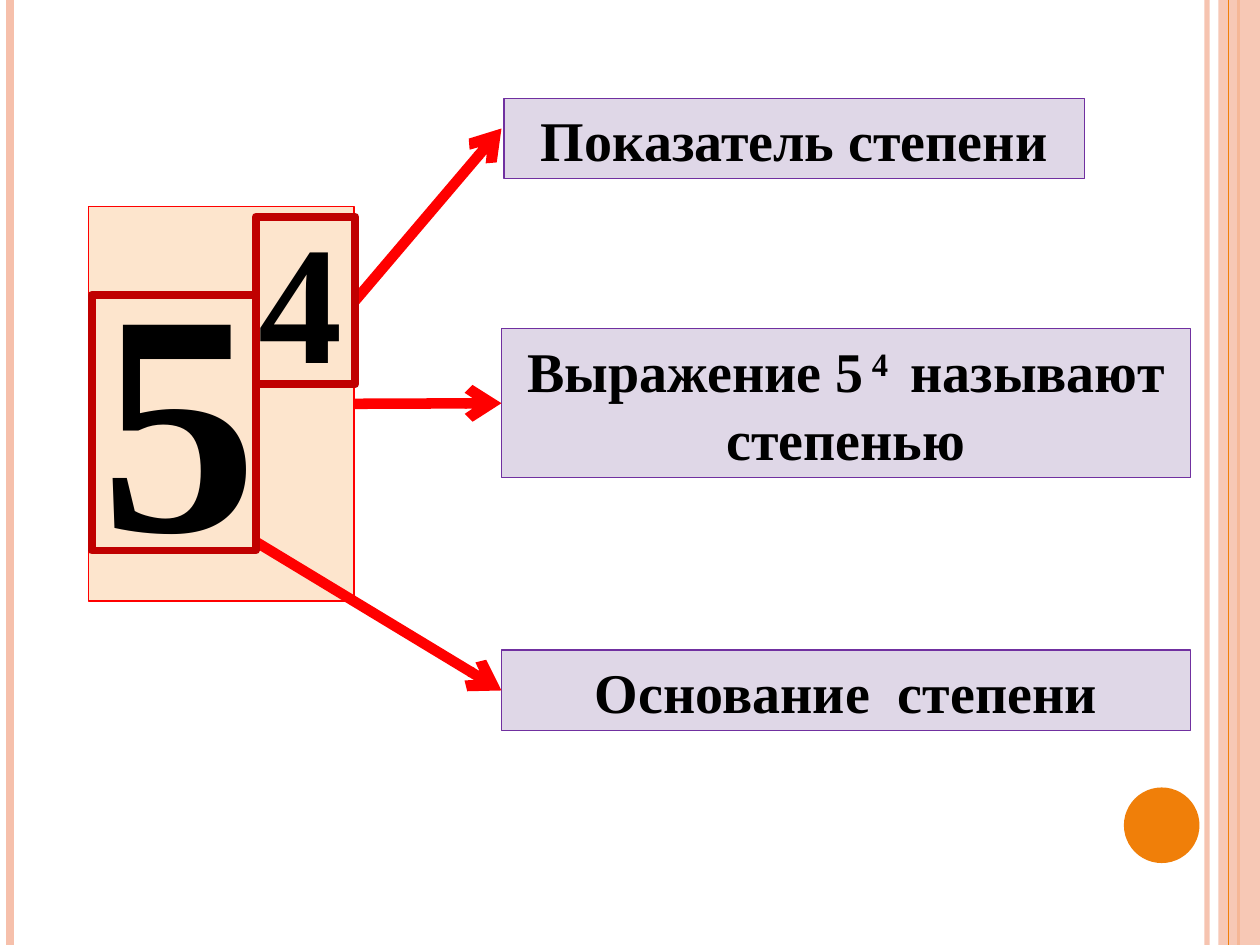
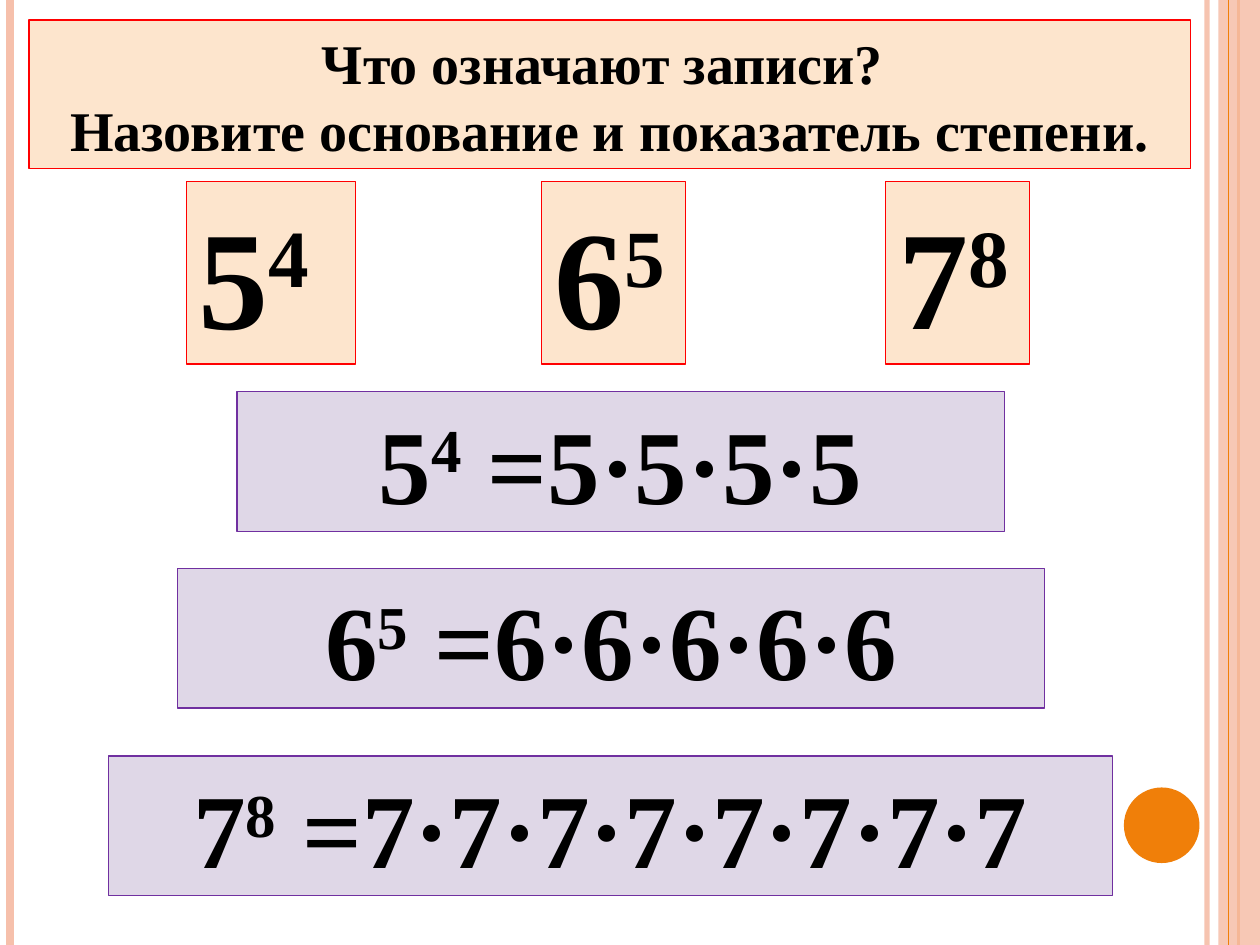
from dataclasses import dataclass

from lxml import etree
from pptx import Presentation
from pptx.dml.color import RGBColor
from pptx.enum import shapes, text
from pptx.oxml.ns import qn
from pptx.util import Inches, Pt


@dataclass(frozen=True)
class Theme:
    """Colours, font and type sizes shared by the slides."""
    font: str = "Times New Roman"
    ink: str = "000000"
    peach: str = "FDE5CD"
    lilac: str = "DFD7E7"
    purple: str = "7030A0"
    red: str = "FF0000"
    dark_red: str = "C00000"
    salmon: str = "F6C0AB"
    orange: str = "F07F09"
    label: int = 32
    equation: int = 60
    power: int = 80
    exponent: int = 96
    base: int = 180
    thin: float = 0.75
    frame: float = 4.5
    arrow: float = 6


THEME = Theme()
PEACH_CARD = (THEME.peach, THEME.red)
LILAC_CARD = (THEME.lilac, THEME.purple)
LEFT, CENTER = text.PP_ALIGN.LEFT, text.PP_ALIGN.CENTER


def paint(shape, fill, line, width=THEME.thin):
    """Set the fill and outline of a shape; None means no paint."""
    if fill:
        shape.fill.solid()
        shape.fill.fore_color.rgb = RGBColor.from_string(fill)
    else:
        shape.fill.background()
    if line:
        shape.line.color.rgb = RGBColor.from_string(line)
        shape.line.width = Pt(width)
    else:
        shape.line.fill.background()


def set_opacity(shape, percent):
    """Make the explicit colours of a shape partly transparent."""
    for colour in shape.element.iter(qn("a:srgbClr")):
        etree.SubElement(colour, qn("a:alpha")).set("val", str(percent * 1000))


def write(shape, paragraphs, size, align=CENTER):
    """Write paragraphs of (text, is_superscript) runs into a shape."""
    frame = shape.text_frame
    frame.word_wrap = True
    frame.vertical_anchor = text.MSO_ANCHOR.BOTTOM
    frame.margin_left = Inches(0.1)
    frame.margin_right = Inches(0 if align == LEFT else 0.1)
    frame.margin_top = frame.margin_bottom = Inches(0.05)
    for index, runs in enumerate(paragraphs):
        paragraph = frame.add_paragraph() if index else frame.paragraphs[0]
        paragraph.alignment = align
        for words, is_superscript in runs:
            run = paragraph.add_run()
            run.text = words
            run.font.name = THEME.font
            run.font.size = Pt(size)
            run.font.bold = True
            run.font.color.rgb = RGBColor.from_string(THEME.ink)
            if is_superscript:
                run.font._element.set("baseline", "30000")


def add_box(slide, box, fill=None, line=None, width=THEME.thin,
            kind=shapes.MSO_SHAPE.RECTANGLE):
    """Add a flat preset shape at box (left, top, width, height)."""
    shape = slide.shapes.add_shape(kind, *map(Inches, box))
    shape.shadow.inherit = False
    paint(shape, fill, line, width)
    return shape


def add_card(slide, box, colours, runs, size, align=CENTER):
    """Add a coloured card with one paragraph."""
    card = add_box(slide, box, *colours)
    write(card, [runs], size, align)
    return card


def add_line(slide, start, end, colour, width, has_arrow=False):
    """Add a straight connector, with an arrowhead at its end if wanted."""
    line = slide.shapes.add_connector(
        shapes.MSO_CONNECTOR.STRAIGHT, *map(Inches, (*start, *end)))
    line.line.color.rgb = RGBColor.from_string(colour)
    line.line.width = Pt(width)
    if has_arrow:
        outline = line.line._get_or_add_ln()
        etree.SubElement(outline, qn("a:tailEnd")).set("type", "arrow")
    etree.SubElement(line.element.spPr, qn("a:effectLst"))
    return line


def add_side_bands(slide, height=7.5):
    """Draw the vertical stripes and the orange disc."""
    def stripe(x, colour, width):
        return add_line(slide, (x, 0), (x, height), colour, width)

    set_opacity(stripe(9.58, THEME.salmon, 3), 93)
    stripe(0.08, THEME.salmon, 4.5)
    stripe(9.75 + 0.08, THEME.orange, 1.5)
    set_opacity(add_box(slide, (9.67, 0, 0.33, height), THEME.salmon), 87)
    stripe(9.75, THEME.orange, 0.75)
    add_box(slide, (8.92, 6.25, 0.6, 0.6), THEME.orange,
            kind=shapes.MSO_SHAPE.OVAL)


def add_big_power(slide, left, top):
    """Draw the large power and return its card."""
    card = add_card(slide, (left, top, 2.11, 3.13), PEACH_CARD,
                    [("5", False)], THEME.base, LEFT)
    add_card(slide, (left + 1.25, top - 0.16, 0.7, 1.72), (None, None),
             [("4", False)], THEME.exponent, LEFT)
    return card


def build_parts_slide(presentation):
    """Name the parts of a power with arrows from each part."""
    slide = presentation.slides.add_slide(presentation.slide_layouts[6])
    add_side_bands(slide)
    add_card(slide, (4, 0.78, 4.61, 0.64), LILAC_CARD,
             [("Показатель степени", False)], THEME.label)
    base_label = add_card(slide, (3.98, 5.16, 5.47, 0.64), LILAC_CARD,
                          [("Основание  степени", False)], THEME.label)
    power_card = add_big_power(slide, 0.7, 1.64)
    power_label = add_card(
        slide, (3.98, 2.61, 5.47, 1.18), LILAC_CARD,
        [("Выражение 5", False), (" 4 ", True), (" называют степенью", False)],
        THEME.label)

    base_arrow, exponent_arrow, power_arrow = [
        add_line(slide, start, end, THEME.red, THEME.arrow, True)
        for start, end in (((2.03, 4.3), (3.98, 5.48)),
                           ((2.82, 2.38), (3.98, 1.02)),
                           ((2.81, 3.2), (3.98, 3.2)))]
    exponent_frame, _ = [
        add_box(slide, box, None, THEME.dark_red, THEME.frame)
        for box in ((2.03, 1.72, 0.79, 1.33), (0.73, 2.34, 1.3, 2.03))]
    base_arrow.end_connect(base_label, 1)
    exponent_arrow.begin_connect(exponent_frame, 3)
    power_arrow.begin_connect(power_card, 3)
    power_arrow.end_connect(power_label, 1)


def add_heading(slide, box, lines):
    """Place and format the title placeholder as a card."""
    title = slide.shapes.title
    title.left, title.top, title.width, title.height = map(Inches, box)
    paint(title, *PEACH_CARD)
    write(title, [[(line, False)] for line in lines], THEME.label)


def build_examples_slide(presentation):
    """Show three powers and their expansion into products."""
    slide = presentation.slides.add_slide(presentation.slide_layouts[5])
    add_side_bands(slide)
    add_heading(slide, (0.23, 0.16, 9.22, 1.18),
                ("Что означают записи? ",
                 "Назовите основание и показатель степени."))
    examples = (
        (5, 4, (1.48, 1.34), (1.88, 3.11, 6.09)),
        (6, 5, (4.3, 1.14), (1.41, 4.51, 6.88)),
        (7, 8, (7.03, 1.14), (0.86, 6, 7.97)),
    )
    for base, exponent, (left, width), product_box in examples:
        power = [(str(base), False), (str(exponent), True)]
        product = " =" + "·".join([str(base)] * exponent)
        add_card(slide, (left, 1.44, width, 1.45), PEACH_CARD, power,
                 THEME.power, LEFT)
        add_card(slide, (*product_box, 1.11), LILAC_CARD,
                 power + [(product, False)], THEME.equation)


def main():
    """Build and save the presentation."""
    presentation = Presentation()
    presentation.slide_width, presentation.slide_height = Inches(10), Inches(7.5)
    build_parts_slide(presentation)
    build_examples_slide(presentation)
    presentation.save("out.pptx")


if __name__ == "__main__":
    main()
